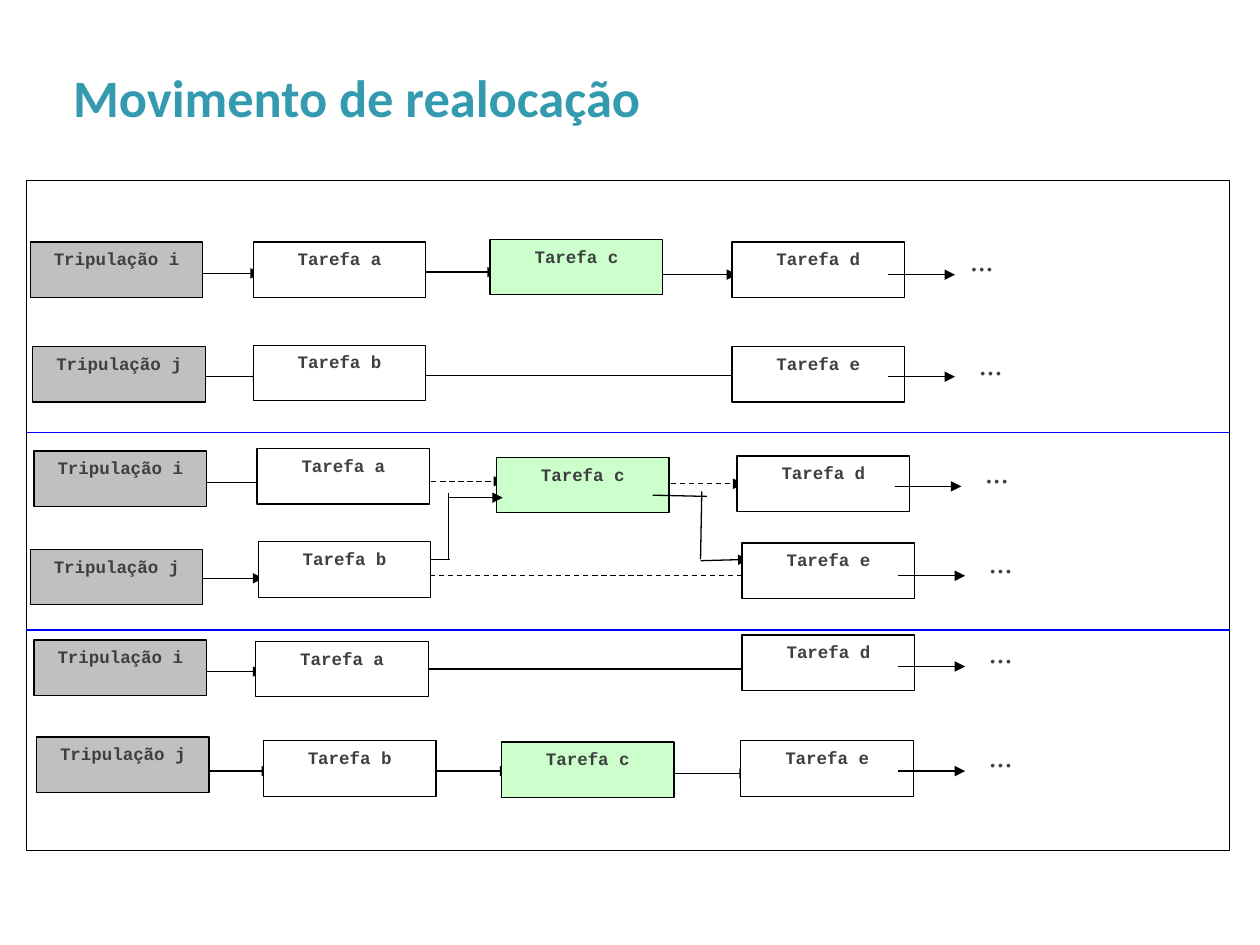
from pptx import Presentation
from pptx.util import Inches, Pt
from pptx.dml.color import RGBColor
from pptx.enum.dml import MSO_LINE as Dash
from pptx.enum.shapes import MSO_SHAPE as Shape, MSO_CONNECTOR as Conn
from pptx.enum.text import PP_ALIGN as Align, MSO_ANCHOR as Anchor, MSO_AUTO_SIZE as Fit
from pptx.oxml.ns import qn
from lxml.etree import SubElement

TITLE = "Movimento de realocação"
BLACK, WHITE, BLUE, INK = "000000", "FFFFFF", "0000FF", "3D3F41"
GREY, GREEN, TEAL = "C0C0C0", "CCFFCC", "339AAF"
FRAME = (0.21, 1.43, 9.55, 5.32)
BOX_W, BOX_H = 1.37, 0.44
DOT_W, DOT_H = 0.91, 0.57
EXIT_W = 0.53

ROWS = [
    {"boxes": [("Tripulação i", 0.24, 1.92), ("Tarefa a", 2.01, 1.92),
               ("Tarefa c", 3.89, 1.9), ("Tarefa d", 5.81, 1.92)],
     "links": [(1.48, 2.07, 2.17), (3.23, 3.95, 2.16), (5.13, 5.85, 2.18)],
     "exit": (7.05, 2.18), "dots": (7.6, 1.86)},
    {"boxes": [("Tripulação j", 0.26, 2.75), ("Tarefa b", 2.01, 2.74),
               ("Tarefa e", 5.81, 2.75)],
     "links": [(1.52, 2.09, 2.99), (3.26, 6.06, 2.98)],
     "exit": (7.05, 2.99), "dots": (7.67, 2.68)},
    {"boxes": [("Tripulação i", 0.27, 3.58), ("Tarefa a", 2.04, 3.56),
               ("Tarefa c", 3.94, 3.63), ("Tarefa d", 5.85, 3.62)],
     "links": [(1.54, 2.12, 3.83), (3.28, 4, 3.82, True), (5.18, 5.9, 3.84, True)],
     "exit": (7.1, 3.86), "dots": (7.72, 3.54)},
    {"boxes": [("Tripulação j", 0.24, 4.36), ("Tarefa b", 2.05, 4.3),
               ("Tarefa e", 5.89, 4.31)],
     "links": [(1.51, 2.09, 4.59), (3.34, 6.13, 4.57, True)],
     "exit": (7.13, 4.57), "dots": (7.75, 4.25)},
    {"boxes": [("Tripulação i", 0.27, 5.08), ("Tarefa a", 2.03, 5.09),
               ("Tarefa d", 5.89, 5.04)],
     "links": [(1.51, 2.09, 5.33), (3.3, 6.15, 5.31)],
     "exit": (7.13, 5.29), "dots": (7.75, 4.97)},
    {"boxes": [("Tripulação j", 0.29, 5.85), ("Tarefa b", 2.09, 5.88),
               ("Tarefa c", 3.98, 5.89), ("Tarefa e", 5.88, 5.88)],
     "links": [(1.52, 2.16, 6.12), (3.33, 4.05, 6.12), (5.24, 5.95, 6.14)],
     "exit": (7.13, 6.12), "dots": (7.75, 5.79)},
]
UNDER = [(3.32, 4.44, 3.57, 4.44, False), (5.56, 4.45, 5.94, 4.44, True)]
OVER = [(3.56, 3.95, 3.99, 3.95, True), (3.56, 3.91, 3.56, 4.44, False),
        (5.18, 3.93, 5.61, 3.94, False), (5.57, 3.9, 5.56, 4.44, False)]
RULES = [3.43, 5]


def color(code):
    return RGBColor.from_string(code)


def style(par, font, size, code, bold):
    par.font.name, par.font.size, par.font.bold = font, Pt(size), bold
    par.font.color.rgb = color(code)


def add_line(slide, x1, y1, x2, y2, head=False, dash=False, code=BLACK):
    line = slide.shapes.add_connector(Conn.STRAIGHT, *map(Inches, (x1, y1, x2, y2)))
    line.line.color.rgb = color(code)
    line.line.width = Pt(0.75)
    if dash:
        line.line.dash_style = Dash.DASH
    props = line._element.spPr
    if head:
        SubElement(props.find(qn("a:ln")), qn("a:tailEnd"), type="triangle")
    SubElement(props, qn("a:effectLst"))


def add_rect(slide, x, y, w, h, fill=WHITE, edge=BLACK):
    rect = slide.shapes.add_shape(Shape.RECTANGLE, *map(Inches, (x, y, w, h)))
    rect.shadow.inherit = False
    rect.fill.solid()
    rect.fill.fore_color.rgb = color(fill)
    rect.line.color.rgb = color(edge)
    rect.line.width = Pt(0.75)
    return rect


def write(rect, text, font, size, bold, align):
    frame = rect.text_frame
    frame.word_wrap = True
    frame.vertical_anchor = Anchor.TOP
    par = frame.paragraphs[0]
    par.text, par.alignment = text, align
    style(par, font, size, INK, bold)


def add_box(slide, name, x, y):
    fill = GREY if name.startswith("Trip") else GREEN if name.endswith(" c") else WHITE
    rect = add_rect(slide, x, y, BOX_W, BOX_H, fill)
    write(rect, name, "Courier New", 10, True, Align.CENTER)


def add_row(slide, row):
    for x1, x2, y, *dash in row["links"]:
        add_line(slide, x1, y, x2, y, True, bool(dash))
    for box in row["boxes"]:
        add_box(slide, *box)
    dots = add_rect(slide, *row["dots"], DOT_W, DOT_H, edge=WHITE)
    write(dots, "...", "Times New Roman", 18, False, Align.LEFT)
    x, y = row["exit"]
    add_line(slide, x, y, x + EXIT_W, y, True)


def add_title(slide):
    title = slide.shapes.title
    title.left, title.top, title.width, title.height = map(Inches, (0.48, 0.3, 9.05, 0.77))
    frame = title.text_frame
    frame.auto_size = Fit.NONE
    frame.vertical_anchor = Anchor.BOTTOM
    par = frame.paragraphs[0]
    par.text, par.alignment, par.line_spacing = TITLE, Align.LEFT, 0.9
    style(par, "Calibri", 30, TEAL, True)


def main():
    deck = Presentation()
    deck.slide_width, deck.slide_height = Inches(10), Inches(7.5)
    slide = deck.slides.add_slide(deck.slide_layouts[5])
    add_title(slide)
    add_rect(slide, *FRAME)
    for line in UNDER:
        add_line(slide, *line)
    for row in ROWS:
        add_row(slide, row)
    for line in OVER:
        add_line(slide, *line)
    left, _, wide, _ = FRAME
    for y in RULES:
        add_line(slide, left, y, left + wide, y, code=BLUE)
    deck.save("out.pptx")


if __name__ == "__main__":
    main()
